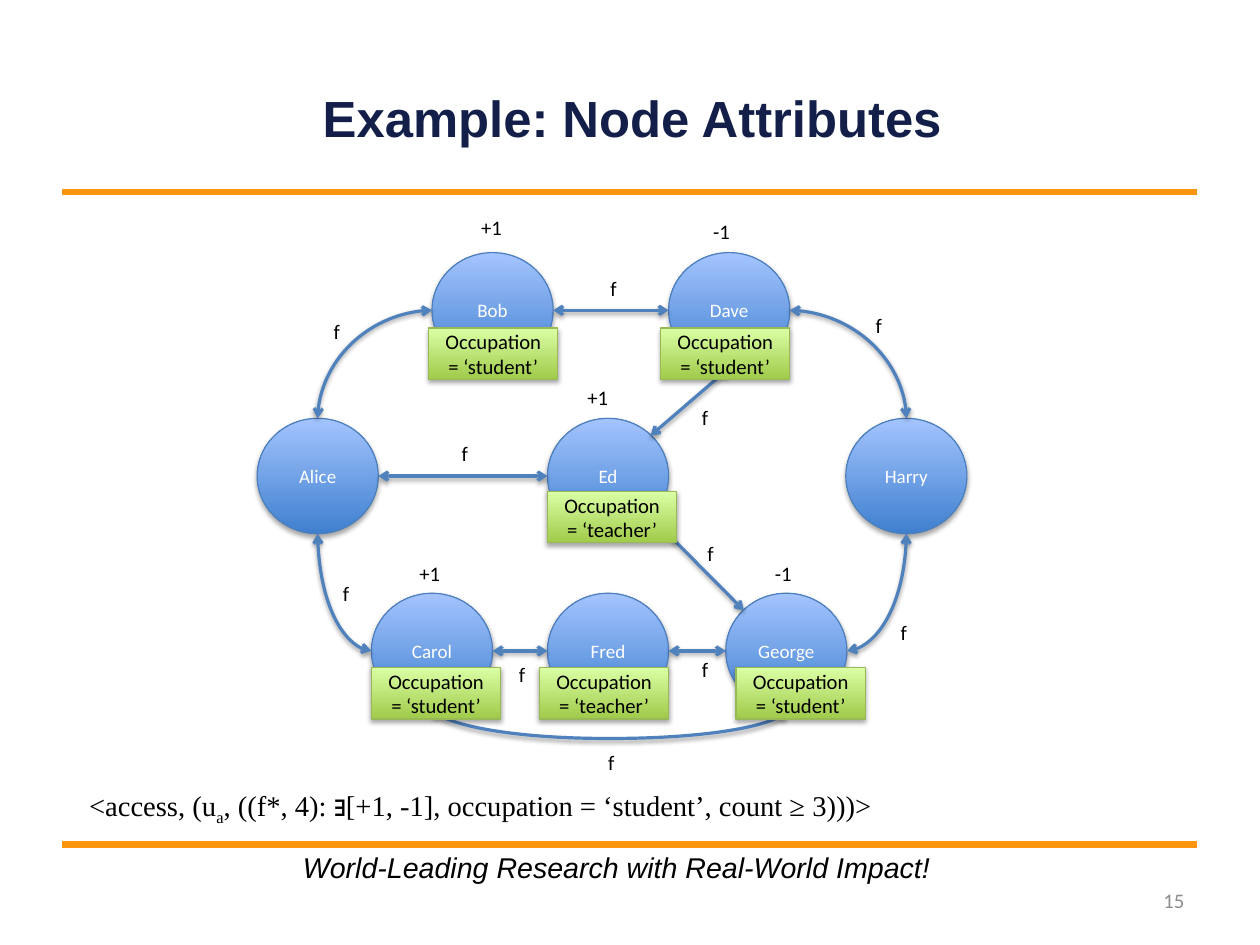
import dataclasses
import typing

import lxml.etree
import pptx
import pptx.dml.color
import pptx.enum.shapes
import pptx.enum.text
import pptx.oxml.ns
import pptx.util

Inches = pptx.util.Inches
Pt = pptx.util.Pt
Shape = pptx.enum.shapes.MSO_SHAPE
Wire = pptx.enum.shapes.MSO_CONNECTOR
Align = pptx.enum.text.PP_ALIGN
Anchor = pptx.enum.text.MSO_ANCHOR
qn = pptx.oxml.ns.qn


@dataclasses.dataclass(frozen=True)
class Theme:
    black: str = "000000"
    white: str = "FFFFFF"
    grey: str = "8C8C8C"
    navy: str = "131F49"
    orange: str = "FF950E"
    edge: str = "4F81BD"
    blue: tuple[str, str, str] = ("3F80CE", "A4C4FF", "4B7EBC")
    green: tuple[str, str, str] = ("A0CA4A", "DAFFA5", "98B955")
    small: int = 12
    label: int = 13
    body: int = 18
    title: int = 32
    sans: str = "Calibri"
    head: str = "Arial"
    serif: str = "Times New Roman"


@dataclasses.dataclass(frozen=True)
class Node:
    name: str
    left: float
    top: float
    job: str = ""
    tag: float = 0


@dataclasses.dataclass(frozen=True)
class Edge:
    start: str
    side: str
    end: str
    stop: str
    form: str = "line"


@dataclasses.dataclass(frozen=True)
class Mark:
    text: str
    left: float
    top: float


THEME = Theme()
INCH = 2.54
WIDE, HIGH = 1.06, 1.01
TOP, MID, LOW = 2.21, 3.66, 5.19
DROP = {TOP: 0.66, MID: 0.64, LOW: 0.65}
DIAG = 0.35
SIDES = {"n": (0, -0.5), "s": (0, 0.5), "w": (-0.5, 0), "e": (0.5, 0),
         "ne": (DIAG, -DIAG), "se": (DIAG, DIAG), "nw": (-DIAG, -DIAG)}
NODES = [
    Node("George", 6.35, LOW, "student", 6.44),
    Node("Fred", 4.79, LOW, "teacher", 4.72),
    Node("Carol", 3.25, LOW, "student", 3.25),
    Node("Harry", 7.4, MID),
    Node("Ed", 4.79, MID, "teacher", 4.79),
    Node("Alice", 2.25, MID),
    Node("Dave", 5.85, TOP, "student", 5.78),
    Node("Bob", 3.78, TOP, "student", 3.75),
]
EDGES = [
    Edge("Bob", "w", "Alice", "n", "bend"),
    Edge("Dave", "e", "Harry", "n", "bend"),
    Edge("Carol", "w", "Alice", "s", "bend"),
    Edge("George", "e", "Harry", "s", "bend"),
    Edge("Ed", "w", "Alice", "e"),
    Edge("Carol", "e", "Fred", "w"),
    Edge("Ed", "ne", "Dave", "s"),
    Edge("George", "nw", "Ed", "se"),
    Edge("George", "w", "Fred", "e"),
    Edge("Carol", "s", "George", "s", "bow"),
    Edge("Bob", "e", "Dave", "w"),
]
LINKS = [(2.83, 2.74), (5.25, 2.36), (7.57, 2.69), (7.79, 5.37), (3.95, 3.81), (2.91, 5.03),
         (6.05, 5.7), (6.1, 4.68), (5.23, 6.51), (4.45, 5.74), (6.05, 3.49)]
SIGNS = [Mark("+1", 5.03, 3.32), Mark("+1", 3.56, 4.86), Mark("-1", 6.13, 1.87),
         Mark("+1", 4.1, 1.83), Mark("-1", 6.67, 4.86)]


def tint(code: str) -> pptx.dml.color.RGBColor:
    return pptx.dml.color.RGBColor.from_string(code)


def write(shape: typing.Any, text: str, *, size: int = THEME.label, font: str = THEME.sans,
          color: str = THEME.black, bold: bool = False, slant: bool = False,
          align: Align = Align.LEFT, anchor: Anchor = Anchor.TOP,
          pad: tuple[float, float] = (0.11, 0.05), wrap: bool = True) -> None:
    frame = shape.text_frame
    frame.word_wrap = wrap
    frame.vertical_anchor = anchor
    frame.margin_left = frame.margin_right = Inches(pad[0])
    frame.margin_top = frame.margin_bottom = Inches(pad[1])
    para = frame.paragraphs[0]
    para.alignment = align
    for turn, part in enumerate(text.split("|")):
        run = para.add_run()
        run.text = part
        run.font.size, run.font.name = Pt(size), font
        run.font.bold, run.font.italic = bold, slant
        run.font.color.rgb = tint(color)
        if turn % 2:
            run._r.get_or_add_rPr().set("baseline", "-25000")


def shade(props: typing.Any, alpha: int, dist: float) -> None:
    glow = props.find(qn("a:effectLst"))
    drop = lxml.etree.SubElement(glow, qn("a:outerShdw"), blurRad=str(Pt(3.1)),
                                 dist=str(Pt(dist)), dir="5400000", rotWithShape="0")
    hue = lxml.etree.SubElement(drop, qn("a:srgbClr"), val=THEME.black)
    lxml.etree.SubElement(hue, qn("a:alpha"), val=str(alpha * 1000))


def block(slide: typing.Any, kind: Shape, box: tuple[float, ...],
          look: tuple[str, str, str]) -> typing.Any:
    shape = slide.shapes.add_shape(kind, *map(Inches, box))
    shape.shadow.inherit = False
    shape.fill.gradient()
    shape.fill.gradient_angle = 90
    for stop, code in zip(shape.fill.gradient_stops, look):
        stop.color.rgb = tint(code)
    shape.line.color.rgb = tint(look[2])
    shape.line.width = Pt(0.75)
    shade(shape._element.spPr, 35, 1.8)
    return shape


def label(slide: typing.Any, box: tuple[float, ...], text: str, **form: typing.Any) -> None:
    write(slide.shapes.add_textbox(*map(Inches, box)), text, **form)


def wire(slide: typing.Any, kind: Wire, ends: tuple[float, ...], code: str,
         width: float) -> typing.Any:
    line = slide.shapes.add_connector(kind, *map(Inches, ends))
    line.line.color.rgb = tint(code)
    line.line.width = Pt(width)
    lxml.etree.SubElement(line._element.spPr, qn("a:effectLst"))
    return line


def spot(node: Node, side: str) -> tuple[float, float]:
    across, down = SIDES[side]
    return node.left + WIDE * (0.5 + across), node.top + HIGH * (0.5 + down)


def join(slide: typing.Any, edge: Edge, nodes: dict[str, Node]) -> None:
    ends = spot(nodes[edge.start], edge.side) + spot(nodes[edge.end], edge.stop)
    kind = Wire.STRAIGHT if edge.form == "line" else Wire.CURVE
    if edge.form == "bow":
        mid, half = (ends[0] + ends[2]) / 2, (ends[2] - ends[0]) / 2
        ends = (mid + 0.01, ends[1] - half, mid - 0.01, ends[1] + half)
    line = wire(slide, kind, ends, THEME.edge, 2)
    props = line._element.spPr
    shape = props.find(qn("a:prstGeom"))
    if edge.form == "bend":
        shape.set("prst", "curvedConnector2")
    if edge.form == "bow":
        props.find(qn("a:xfrm")).set("rot", str(270 * 60000))
        guides = shape.find(qn("a:avLst"))
        lxml.etree.SubElement(guides, qn("a:gd"), name="adj1", fmla="val 1350000")
    for tip in ("a:headEnd", "a:tailEnd"):
        lxml.etree.SubElement(props.find(qn("a:ln")), qn(tip), type="arrow")
    shade(props, 38, 1.6)


def main() -> None:
    deck = pptx.Presentation()
    deck.slide_width = Inches(28 / INCH)
    deck.slide_height = Inches(21 / INCH)
    slide = deck.slides.add_slide(deck.slide_layouts[6])
    for level in (1.68, 7.39):
        wire(slide, Wire.STRAIGHT, (0.54, level, 10.47, level), THEME.orange, 4.31)
    label(slide, (7.9, 7.66, 2.57, 0.44), "15", color=THEME.grey, align=Align.RIGHT,
          anchor=Anchor.MIDDLE)
    for node in NODES:
        disc = block(slide, Shape.OVAL, (node.left, node.top, WIDE, HIGH), THEME.blue)
        write(disc, node.name, size=THEME.small, color=THEME.white, align=Align.CENTER,
              anchor=Anchor.MIDDLE, pad=(0.1, 0.05))
    nodes = {node.name: node for node in NODES}
    for edge in EDGES:
        join(slide, edge, nodes)
    for left, top in LINKS:
        label(slide, (left, top, 0.2, 0.32), "f", pad=(0.09, 0.05))
    for sign in SIGNS:
        label(slide, (sign.left, sign.top, 0.44, 0.33), sign.text)
    for node in filter(lambda each: each.job, NODES):
        box = (node.tag, node.top + DROP[node.top], 1.13, 0.45)
        tag = block(slide, Shape.RECTANGLE, box, THEME.green)
        write(tag, f"Occupation = ‘{node.job}’", align=Align.CENTER, anchor=Anchor.MIDDLE)
    label(slide, (0.67, 6.84, 7.95, 0.41),
          "<access, (u|a|, ((f*, 4): ∃[+1, -1], occupation = ‘student’, count ≥ 3)))>",
          size=THEME.body, font=THEME.serif)
    label(slide, (2.54, 7.39, 5.76, 0.41), "World-Leading Research with Real-World Impact!",
          size=THEME.body, font=THEME.head, slant=True, wrap=False)
    label(slide, (2.32, 0.65, 6.43, 0.75), "Example: Node Attributes", size=THEME.title,
          font=THEME.head, color=THEME.navy, bold=True, align=Align.CENTER,
          anchor=Anchor.MIDDLE, pad=(0, 0))
    deck.save("out.pptx")


if __name__ == "__main__":
    main()
